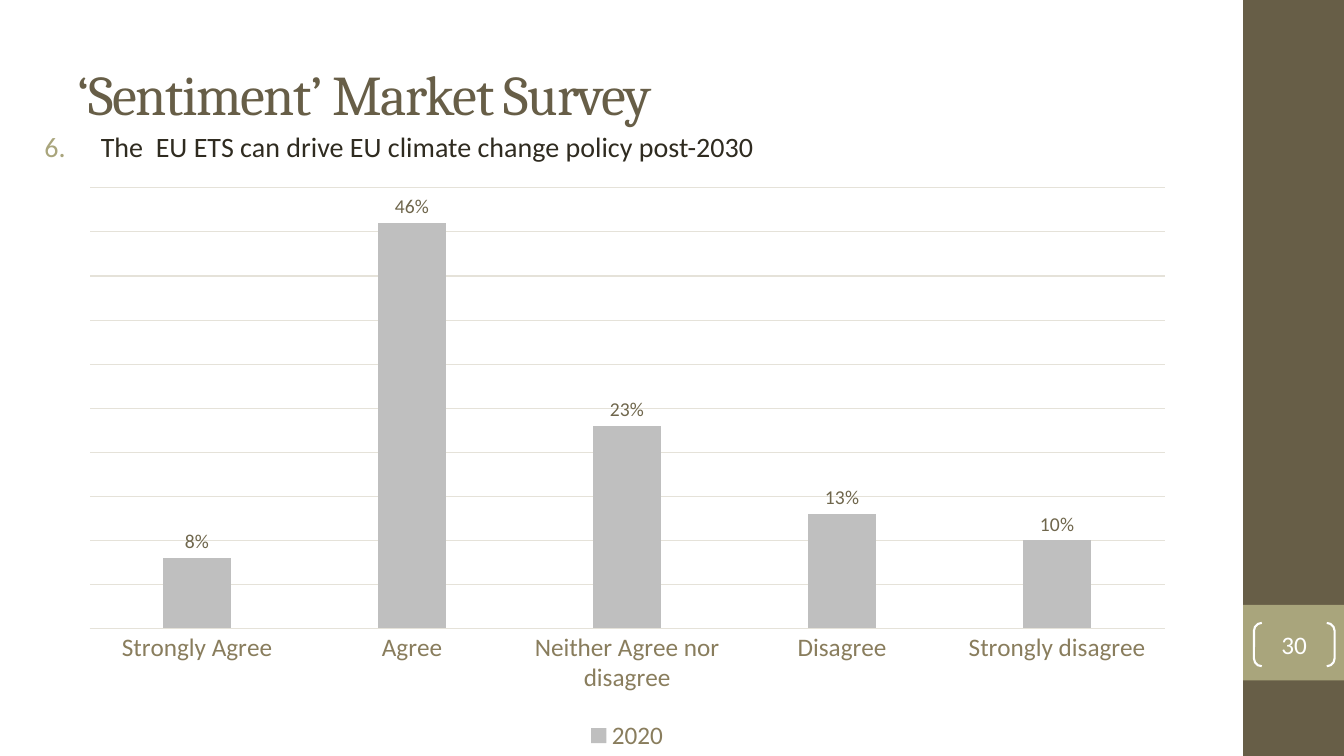
from dataclasses import dataclass

from lxml import etree
from pptx import Presentation
from pptx import util as u
from pptx.chart import data as chart_data
from pptx.dml import color
from pptx.enum import chart as ch
from pptx.enum import shapes, text
from pptx.oxml import ns

COLUMNS, ROWS = 40, 30
BROWN, OLIVE, WHITE, INK = "675E47", "A9A57C", "FFFFFF", "2F2B20"
GRID_LINE, AXIS_TEXT, LABEL_TEXT, BAR = "E5E2D9", "897D5D", "6F664C", "BFBFBF"

presentation = Presentation()
presentation.slide_width = u.Inches(13.33)
presentation.slide_height = u.Inches(7.5)
slide = presentation.slides.add_slide(presentation.slide_layouts[1])


@dataclass(frozen=True)
class Area:
    """A rectangle in grid columns and rows."""
    left: float
    top: float
    width: float
    height: float

    def box(self) -> tuple[int, int, int, int]:
        column = presentation.slide_width / COLUMNS
        row = presentation.slide_height / ROWS
        return (round(self.left * column), round(self.top * row),
                round(self.width * column), round(self.height * row))


@dataclass(frozen=True)
class Panel:
    area: Area
    fill: str


PANELS = [
    Panel(Area(37, 0, 3, 30), BROWN),
    Panel(Area(37, 24, 3, 3), OLIVE),
]
TITLE = Area(2, 1.2, 33.33, 5)
QUESTION = Area(0.63, 4.92, 35.76, 3.84)
CHART = Area(2, 7, 33.33, 23)
PAGE_NUMBER = Area(37.32, 24.72, 2.4, 1.72)

ANSWERS = {
    "Strongly Agree": 0.08,
    "Agree": 0.46,
    "Neither Agree nor disagree": 0.23,
    "Disagree": 0.13,
    "Strongly disagree": 0.10,
}


def rgb(value: str) -> color.RGBColor:
    return color.RGBColor.from_string(value)


def style_font(font, size: float, fill: str, name: str = "Calibri") -> None:
    font.name = name
    font.size = u.Pt(size)
    font.color.rgb = rgb(fill)


def style_line(line, fill: str, width: float) -> None:
    line.color.rgb = rgb(fill)
    line.width = u.Pt(width)


def place(shape, area: Area) -> None:
    shape.left, shape.top, shape.width, shape.height = area.box()


def add_run(paragraph, words: str, size: float, fill: str, name: str = "Calibri"):
    run = paragraph.add_run()
    run.text = words
    style_font(run.font, size, fill, name)
    return run


def add_panel(panel: Panel) -> None:
    shape = slide.shapes.add_shape(shapes.MSO_SHAPE.RECTANGLE, *panel.area.box())
    shape.shadow.inherit = False
    shape.fill.solid()
    shape.fill.fore_color.rgb = rgb(panel.fill)
    shape.line.fill.background()


def number_paragraph(paragraph, start: int, fill: str) -> None:
    properties = paragraph._p.get_or_add_pPr()
    properties.set("marL", str(u.Inches(0.69)))
    properties.set("indent", str(u.Inches(-0.56)))
    bullet_color = etree.SubElement(properties, ns.qn("a:buClr"))
    etree.SubElement(bullet_color, ns.qn("a:srgbClr"), val=fill)
    etree.SubElement(properties, ns.qn("a:buFont"), typeface="Calibri")
    etree.SubElement(properties, ns.qn("a:buAutoNum"),
                     type="arabicPeriod", startAt=str(start))


def add_survey_chart(area: Area, answers: dict[str, float]) -> None:
    survey = chart_data.CategoryChartData(number_format="0%")
    survey.categories = list(answers)
    survey.add_series("2020", list(answers.values()))
    chart = slide.shapes.add_chart(
        ch.XL_CHART_TYPE.COLUMN_CLUSTERED, *area.box(), survey).chart
    style_font(chart.font, 10, INK)
    chart.has_title = False
    chart.has_legend = True
    chart.legend.position = ch.XL_LEGEND_POSITION.BOTTOM
    chart.legend.include_in_layout = False
    style_font(chart.legend.font, 18, AXIS_TEXT)

    # Axes
    categories, values = chart.category_axis, chart.value_axis
    categories.major_tick_mark = ch.XL_TICK_MARK.NONE
    style_font(categories.tick_labels.font, 18, AXIS_TEXT)
    style_line(categories.format.line, GRID_LINE, 0.75)
    values.visible = False
    values.minimum_scale, values.maximum_scale, values.major_unit = 0, 0.5, 0.05
    values.tick_labels.number_format = "0%"
    values.tick_labels.number_format_is_linked = False
    values.has_major_gridlines = True
    style_line(values.major_gridlines.format.line, GRID_LINE, 0.75)

    # Columns and their labels
    plot = chart.plots[0]
    plot.gap_width, plot.overlap, plot.vary_by_categories = 219, -27, False
    series = plot.series[0]
    series.format.fill.solid()
    series.format.fill.fore_color.rgb = rgb(BAR)
    labels = series.data_labels
    labels.show_value = True
    labels.position = ch.XL_LABEL_POSITION.OUTSIDE_END
    labels.number_format = "0%"
    labels.number_format_is_linked = False
    style_font(labels.font, 14, LABEL_TEXT)

    # Position of the plot inside the chart
    plot_area = chart._chartSpace.chart.plotArea
    layout = plot_area.find(ns.qn("c:layout"))
    if layout is None:
        layout = etree.Element(ns.qn("c:layout"))
        plot_area.insert(0, layout)
    manual = etree.SubElement(layout, ns.qn("c:manualLayout"))
    settings = {"layoutTarget": "inner", "xMode": "edge", "yMode": "edge",
                "x": "0.02", "y": "0.02", "w": "0.96", "h": "0.76"}
    for tag, value in settings.items():
        etree.SubElement(manual, ns.qn(f"c:{tag}"), val=value)


def add_page_number(area: Area, number: str) -> None:
    shape = slide.shapes.add_shape(shapes.MSO_SHAPE.DOUBLE_BRACKET, *area.box())
    shape.adjustments[0] = 0.18
    shape.shadow.inherit = False
    shape.fill.background()
    style_line(shape.line, WHITE, 1.5)
    frame = shape.text_frame
    frame.margin_left = frame.margin_right = 0
    frame.margin_top = frame.margin_bottom = 0
    frame.vertical_anchor = text.MSO_ANCHOR.MIDDLE
    paragraph = frame.paragraphs[0]
    paragraph.alignment = text.PP_ALIGN.CENTER
    add_run(paragraph, number, 18, WHITE)


# Sidebar
for panel in PANELS:
    add_panel(panel)
add_page_number(PAGE_NUMBER, "30")

# Title
title = slide.shapes.title
place(title, TITLE)
title.text_frame.vertical_anchor = text.MSO_ANCHOR.MIDDLE
heading = title.text_frame.paragraphs[0]
heading.alignment = text.PP_ALIGN.LEFT
heading_run = add_run(heading, "‘Sentiment’ Market Survey", 40, BROWN, "Cambria")
heading_run.font._element.set("spc", "-100")

# Numbered question
body = slide.placeholders[1]
place(body, QUESTION)
question = body.text_frame.paragraphs[0]
question.alignment = text.PP_ALIGN.JUSTIFY
number_paragraph(question, 6, OLIVE)
add_run(question, "The  EU ETS can drive EU climate change policy post-2030", 20, INK)

# Survey results
add_survey_chart(CHART, ANSWERS)

presentation.save("out.pptx")
